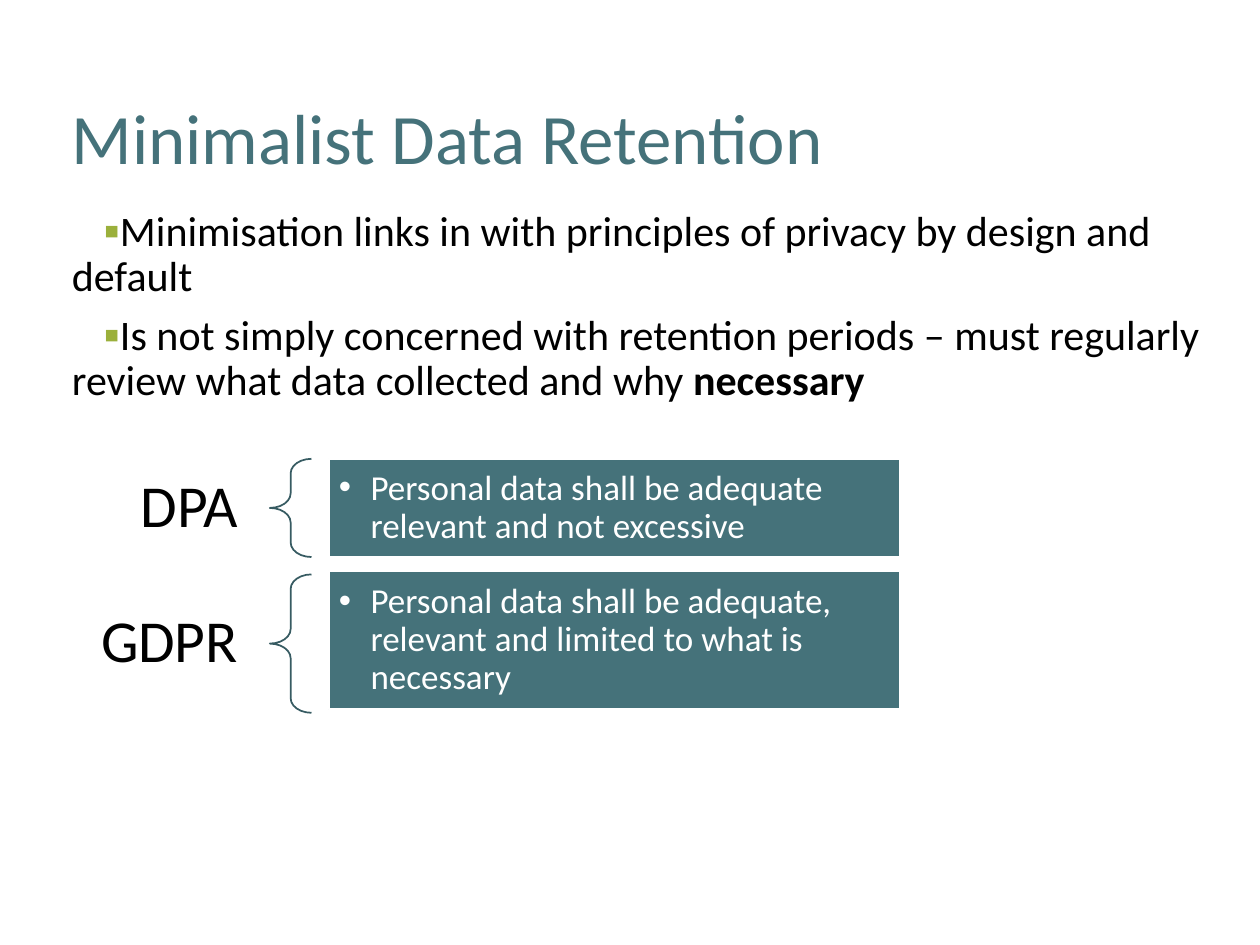
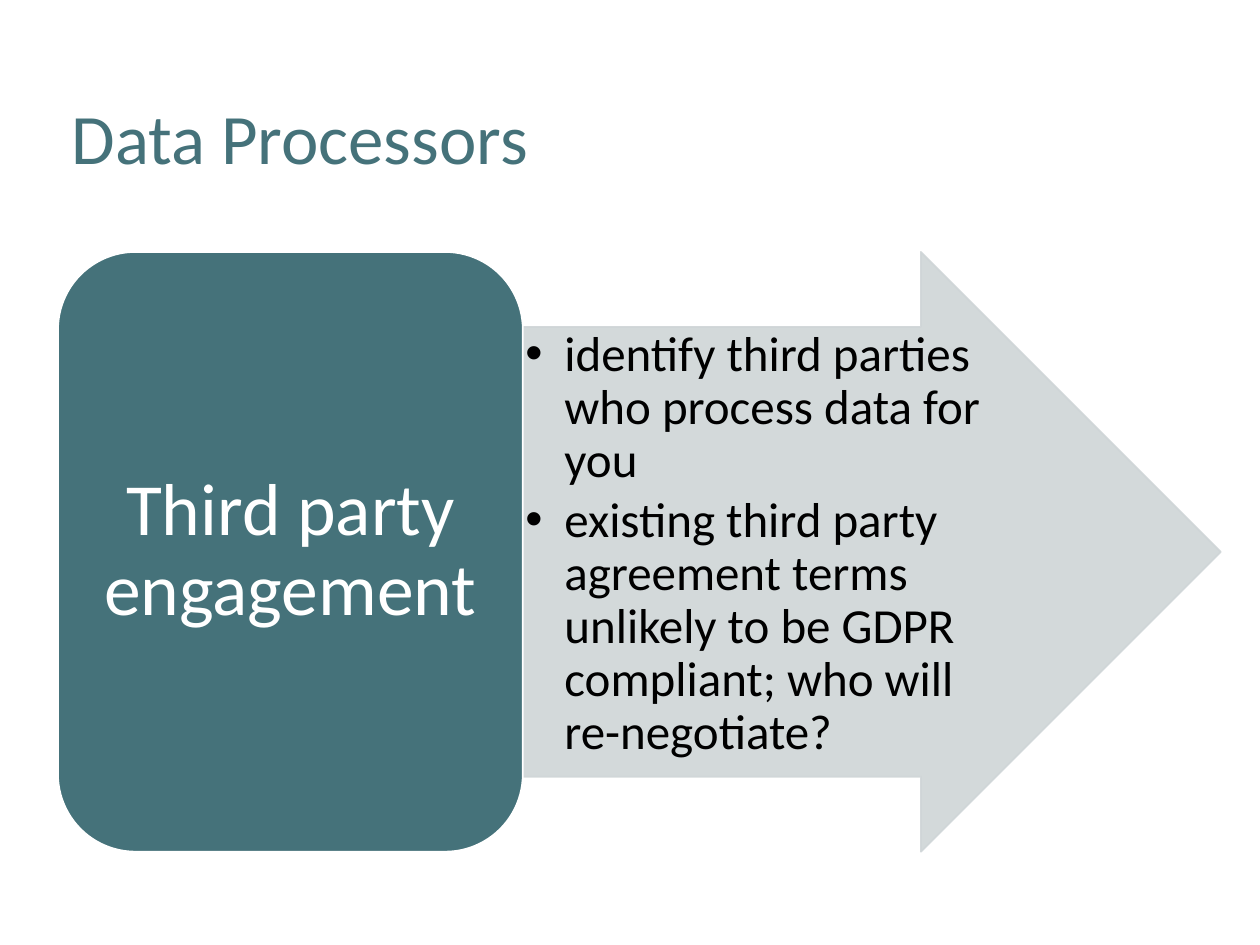
from lxml.etree import SubElement
from pptx import Presentation
from pptx.dml.color import RGBColor
from pptx.enum.shapes import MSO_SHAPE
from pptx.enum.text import MSO_ANCHOR, MSO_AUTO_SIZE, PP_ALIGN
from pptx.oxml.ns import qn
from pptx.util import Cm, Pt

TEAL = RGBColor(0x45, 0x72, 0x7A)
DARK_TEAL = RGBColor(0x37, 0x5B, 0x62)
GREEN = RGBColor(0x9B, 0xB0, 0x3B)
GREY = RGBColor(0xCF, 0xD5, 0xD7)
WHITE = RGBColor(0xFF, 0xFF, 0xFF)
BLACK = RGBColor(0x00, 0x00, 0x00)

FONT = "Calibri"
BODY_LEFT = 1.17
BODY_WIDTH = 23.44


def add_bullet(paragraph, char, margin, indent, color=None, size=None):
    """Give a paragraph a bullet; margin and indent are in centimetres."""
    props = paragraph._p.get_or_add_pPr()
    props.set("marL", str(Cm(margin)))
    props.set("indent", str(Cm(indent)))
    if color is not None:
        bullet_color = SubElement(props, qn("a:buClr"))
        SubElement(bullet_color, qn("a:srgbClr"), val=str(color))
    if size:
        SubElement(props, qn("a:buSzPct"), val=str(size * 1000))
    SubElement(props, qn("a:buFont"), typeface="Arial")
    SubElement(props, qn("a:buChar"), char=char)


def write_text(shape, paragraphs, size, color=BLACK, align=PP_ALIGN.LEFT,
               anchor=MSO_ANCHOR.MIDDLE, insets=(0.25, 0.13), bullet=None,
               before=0, after=0):
    """Fill a shape; each paragraph is a string or a list of (text, bold) runs."""
    frame = shape.text_frame
    frame.word_wrap = True
    frame.auto_size = MSO_AUTO_SIZE.NONE
    frame.vertical_anchor = anchor
    frame.margin_left = frame.margin_right = Cm(insets[0])
    frame.margin_top = frame.margin_bottom = Cm(insets[1])
    for index, content in enumerate(paragraphs):
        paragraph = frame.add_paragraph() if index else frame.paragraphs[0]
        paragraph.alignment = align
        paragraph.line_spacing = 0.9
        paragraph.space_before = Pt(before if index else 0)
        paragraph.space_after = Pt(after)
        if bullet:
            add_bullet(paragraph, **bullet)
        runs = [(content, False)] if isinstance(content, str) else content
        for text, bold in runs:
            run = paragraph.add_run()
            run.text = text
            run.font.name = FONT
            run.font.size = Pt(size)
            run.font.bold = bold
            run.font.color.rgb = color


def place(shape, left, top, width, height):
    shape.left, shape.top = Cm(left), Cm(top)
    shape.width, shape.height = Cm(width), Cm(height)


def add_titled_slide(prs, layout, title):
    slide = prs.slides.add_slide(prs.slide_layouts[layout])
    place(slide.shapes.title, 1.19, 1.02, 20.12, 3.68)
    write_text(slide.shapes.title, [title], 40.5, TEAL)
    return slide


def add_figure(slide, preset, box, fill=None, line=WHITE, adjustments=(), opacity=None):
    figure = slide.shapes.add_shape(preset, *map(Cm, box))
    figure.shadow.inherit = False
    for index, value in enumerate(adjustments):
        figure.adjustments[index] = value
    if fill is None:
        figure.fill.background()
    else:
        figure.fill.solid()
        figure.fill.fore_color.rgb = fill
    figure.line.color.rgb = line
    figure.line.width = Pt(1)
    if opacity:
        for color in figure._element.spPr.iter(qn("a:srgbClr")):
            SubElement(color, qn("a:alpha"), val=str(opacity * 1000))
    return figure


def add_law_row(slide, law, principle, brace_top, box_top, height):
    """One law: its name, a brace and the principle it sets."""
    label_height = 1.88
    label_top = brace_top + (height - label_height) / 2
    label = slide.shapes.add_textbox(Cm(1.22), Cm(label_top), Cm(4.24), Cm(label_height))
    write_text(label, [law], 34, align=PP_ALIGN.RIGHT, insets=(0.66, 0.23))
    add_figure(slide, MSO_SHAPE.LEFT_BRACE, (5.44, brace_top, 0.84, height),
               line=DARK_TEAL, adjustments=(0.35, 0.5))
    box = add_figure(slide, MSO_SHAPE.RECTANGLE, (6.63, box_top, 11.51, height), TEAL)
    write_text(box, [principle], 20, WHITE, insets=(0.2, 0.2),
               bullet=dict(char="•", margin=0.64, indent=-0.64))


def build_retention(prs):
    slide = add_titled_slide(prs, 1, "Minimalist Data Retention")
    points = slide.placeholders[1]
    place(points, BODY_LEFT, 4.11, BODY_WIDTH, 13.06)
    write_text(points, [
        "Minimisation links in with principles of privacy by design and default",
        [("Is not simply concerned with retention periods – must regularly "
          "review what data collected and why ", False), ("necessary", True)],
    ], 24, anchor=MSO_ANCHOR.TOP, before=7.5,
        bullet=dict(char="▪", margin=0.03, indent=0.64, color=GREEN, size=110))

    # Old and new law compared
    add_law_row(slide, "DPA", "Personal data shall be adequate relevant and not excessive",
                9.25, 9.25, 1.98)
    add_law_row(slide, "GDPR", "Personal data shall be adequate, relevant and limited "
                "to what is necessary", 11.58, 11.51, 2.79)


def build_processors(prs):
    slide = add_titled_slide(prs, 5, "Data Processors")
    top, height, topic_width = 5.08, 12.09, 9.37

    # Actions in the arrow
    actions = add_figure(slide, MSO_SHAPE.RIGHT_ARROW,
                         (BODY_LEFT + topic_width, top, BODY_WIDTH - topic_width, height),
                         GREY, GREY, (0.75, 0.5), opacity=90)
    write_text(actions, [
        "identify third parties who process data for you",
        "existing third party agreement terms unlikely to be GDPR compliant; "
        "who will re-negotiate?",
    ], 28, anchor=MSO_ANCHOR.TOP, insets=(0.05, 0.05), after=4.2,
        bullet=dict(char="•", margin=0.79, indent=-0.79))

    # Topic beside it
    topic = add_figure(slide, MSO_SHAPE.ROUNDED_RECTANGLE,
                       (BODY_LEFT, top, topic_width, height), TEAL)
    write_text(topic, ["Third party engagement"], 42, WHITE, PP_ALIGN.CENTER,
               insets=(0.43, 0.23))


def main():
    prs = Presentation()
    prs.slide_width, prs.slide_height = Cm(25.4), Cm(19.05)
    build_retention(prs)
    build_processors(prs)
    prs.save("out.pptx")


if __name__ == "__main__":
    main()
